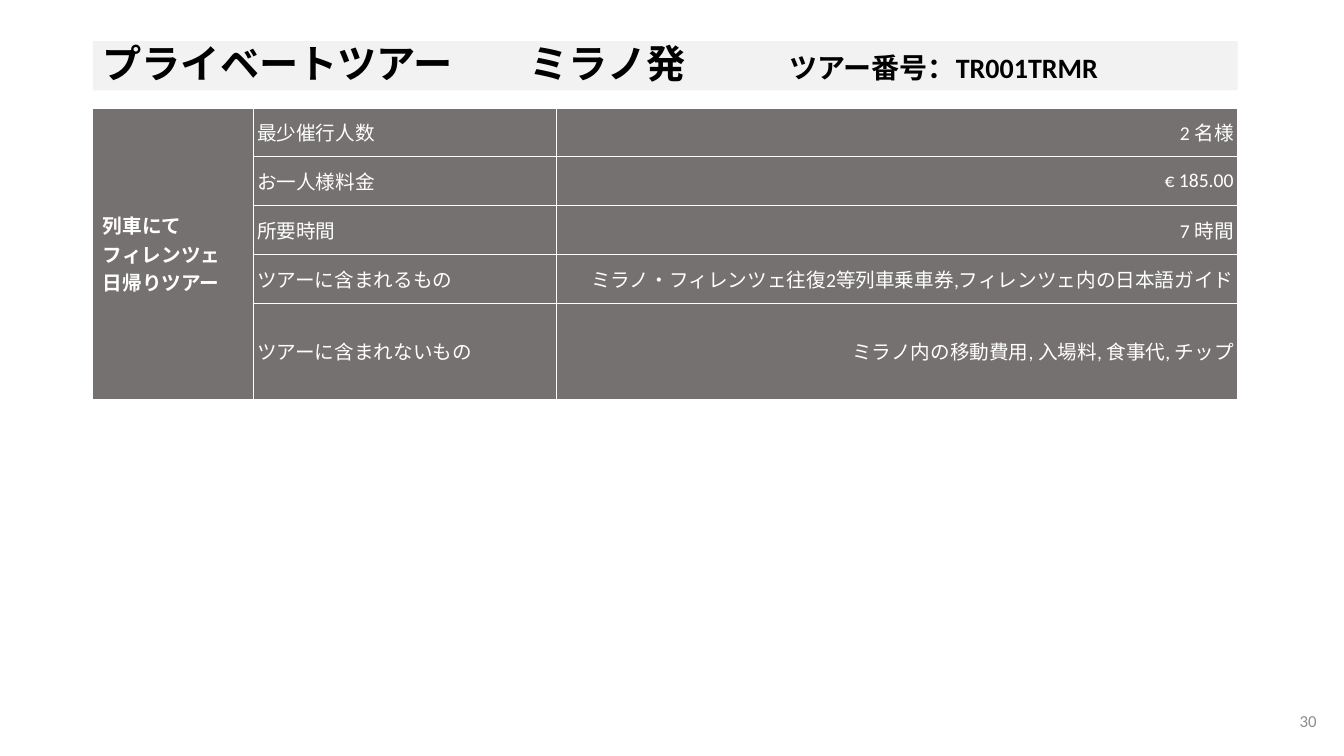
from dataclasses import dataclass

from lxml import etree
from pptx import Presentation
from pptx.dml.color import RGBColor
from pptx.enum.shapes import MSO_SHAPE
from pptx.enum.text import MSO_ANCHOR, PP_ALIGN
from pptx.oxml.ns import qn
from pptx.util import Cm, Pt

RECTANGLE = MSO_SHAPE.RECTANGLE
MIDDLE = MSO_ANCHOR.MIDDLE
LEFT, RIGHT = PP_ALIGN.LEFT, PP_ALIGN.RIGHT

FONT = "Calibri"
BLACK, WHITE = "000000", "FFFFFF"
BAND_GREY, CELL_GREY, NUMBER_GREY = "F2F2F2", "767171", "8C8C8C"

CONTENT_LEFT, CONTENT_WIDTH = 2.34, 28.85
COLUMN_WIDTHS = (4.04, 7.64, 17.17)
ROW_HEIGHT, LAST_ROW_HEIGHT = 1.23, 2.42
DETAIL_MARGIN = 0.1
TITLE_TABS = (10.76, 17.3)


@dataclass(frozen=True)
class Detail:
    label: str
    value: str
    height: float = ROW_HEIGHT


TOUR_NAME = ("列車にて", "フィレンツェ", "日帰りツアー")
DETAILS = (
    Detail("最少催行人数", "2 名様"),
    Detail("お一人様料金", "€ 185.00"),
    Detail("所要時間", "7 時間"),
    Detail("ツアーに含まれるもの",
           "ミラノ・フィレンツェ往復2等列車乗車券,フィレンツェ内の日本語ガイド"),
    Detail("ツアーに含まれないもの",
           "ミラノ内の移動費用, 入場料, 食事代, チップ", LAST_ROW_HEIGHT),
)


def color(hex_code: str) -> RGBColor:
    return RGBColor.from_string(hex_code)


def style_font(font, size: float, hex_code: str, bold: bool = False) -> None:
    font.name = FONT
    font.size = Pt(size)
    font.bold = bold
    font.color.rgb = color(hex_code)


def add_tab_stops(paragraph, positions: tuple) -> None:
    tab_list = etree.SubElement(paragraph._p.get_or_add_pPr(), qn("a:tabLst"))
    for position in positions:
        etree.SubElement(tab_list, qn("a:tab"), pos=str(Cm(position)), algn="l")


def add_borders(cell) -> None:
    properties = cell._tc.get_or_add_tcPr()
    for side in ("lnL", "lnR", "lnT", "lnB"):
        line = etree.SubElement(properties, qn(f"a:{side}"), w=str(Pt(1)))
        fill = etree.SubElement(line, qn("a:solidFill"))
        etree.SubElement(fill, qn("a:srgbClr"), val=WHITE)


def style_cell(cell) -> None:
    add_borders(cell)
    cell.fill.solid()
    cell.fill.fore_color.rgb = color(CELL_GREY)
    cell.vertical_anchor = MIDDLE


def write_detail(cell, text: str, alignment: PP_ALIGN) -> None:
    cell.margin_left = cell.margin_right = Cm(DETAIL_MARGIN)
    cell.margin_top = cell.margin_bottom = Cm(DETAIL_MARGIN)
    paragraph = cell.text_frame.paragraphs[0]
    paragraph.text = text
    paragraph.alignment = alignment
    style_font(paragraph.font, 14, WHITE)


def add_title(slide) -> None:
    band = slide.shapes.add_shape(
        RECTANGLE, Cm(CONTENT_LEFT), Cm(1.04), Cm(CONTENT_WIDTH), Cm(1.24))
    band.shadow.inherit = False
    band.fill.solid()
    band.fill.fore_color.rgb = color(BAND_GREY)
    band.line.fill.background()
    band.text_frame.word_wrap = True
    band.text_frame.vertical_anchor = MIDDLE
    heading = band.text_frame.paragraphs[0]
    heading.alignment = LEFT
    heading.line_spacing = 0.9
    add_tab_stops(heading, TITLE_TABS)
    for text, size in (("プライベートツアー\tミラノ発\t", 28),
                       ("ツアー番号：TR001TRMR", 20)):
        run = heading.add_run()
        run.text = text
        style_font(run.font, size, BLACK, bold=True)


def add_tour_table(slide) -> None:
    table_height = sum(detail.height for detail in DETAILS)
    tour = slide.shapes.add_table(
        len(DETAILS), len(COLUMN_WIDTHS), Cm(CONTENT_LEFT), Cm(2.72),
        Cm(CONTENT_WIDTH), Cm(table_height)).table
    for column, width in zip(tour.columns, COLUMN_WIDTHS):
        column.width = Cm(width)
    for cell in tour.iter_cells():
        style_cell(cell)

    # Tour name spanning all rows
    name_cell = tour.cell(0, 0)
    name_cell.merge(tour.cell(len(DETAILS) - 1, 0))
    name_cell.text = "\n".join(TOUR_NAME)
    for paragraph in name_cell.text_frame.paragraphs:
        style_font(paragraph.font, 14, WHITE, bold=True)

    # Labels and values
    for index, detail in enumerate(DETAILS):
        tour.rows[index].height = Cm(detail.height)
        write_detail(tour.cell(index, 1), detail.label, LEFT)
        write_detail(tour.cell(index, 2), detail.value, RIGHT)


def add_page_number(slide) -> None:
    page_number = slide.shapes.add_textbox(
        Cm(25.81), Cm(17.65), Cm(7.62), Cm(1.02)).text_frame
    page_number.word_wrap = True
    page_number.vertical_anchor = MIDDLE
    paragraph = page_number.paragraphs[0]
    paragraph.text = "30"
    paragraph.alignment = RIGHT
    style_font(paragraph.font, 12, NUMBER_GREY)


def main() -> None:
    presentation = Presentation()
    presentation.slide_width = Cm(33.87)
    presentation.slide_height = Cm(19.05)
    slide = presentation.slides.add_slide(presentation.slide_layouts[6])
    add_title(slide)
    add_tour_table(slide)
    add_page_number(slide)
    presentation.save("out.pptx")


if __name__ == "__main__":
    main()
